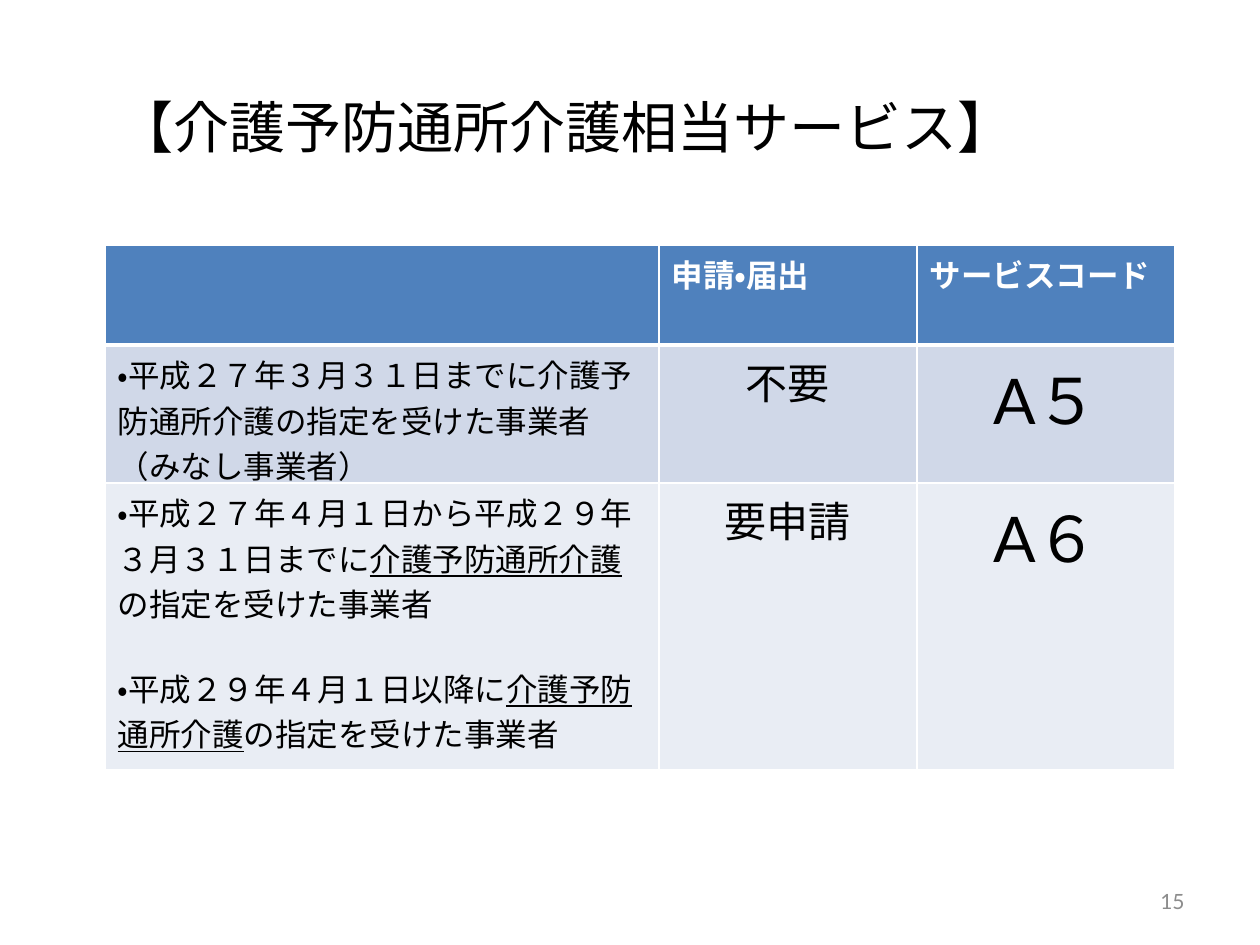
"""Build the slide on preventive day-care services and their service codes."""
from dataclasses import dataclass

from lxml import etree
from pptx import Presentation
from pptx import util as u
from pptx.dml.color import RGBColor
from pptx.enum import lang, text
from pptx.oxml.ns import qn

SCALE = u.Inches(1) / 126
COLORS = {
    "header": "4F81BD",
    "band": "D0D8E8",
    "light": "E9EDF4",
    "white": "FFFFFF",
    "black": "000000",
    "grey": "8C8C8C",
}
LEFT, CENTER, RIGHT = (text.PP_ALIGN.LEFT, text.PP_ALIGN.CENTER,
                       text.PP_ALIGN.RIGHT)
SERVICE = "介護予防通所介護"


@dataclass(frozen=True)
class Style:
    size: int
    color: str = "black"
    bold: bool = False
    align: text.PP_ALIGN = LEFT


@dataclass(frozen=True)
class Row:
    height: int
    fill: str
    styles: tuple[Style, ...]
    cells: tuple[str, ...]
    top: int = 1
    bottom: int = 1


HEAD = Style(18, "white", True)
BODY = (Style(18), Style(24, align=CENTER), Style(36, align=CENTER))
COLUMNS = (554, 258, 258)
ROWS = (
    Row(100, "header", (HEAD,) * 3, ("", "申請・届出", "サービスコード"), bottom=3),
    Row(138, "band", BODY,
        ("・平成２７年３月３１日までに介護予防通所介護の指定を受けた事業者（みなし事業者）",
         "不要", "A５"), top=3),
    Row(287, "light", BODY,
        (f"・平成２７年４月１日から平成２９年３月３１日までに_{SERVICE}_の指定を受けた事業者\n"
         f"・平成２９年４月１日以降に_{SERVICE}_の指定を受けた事業者",
         "要申請", "A６")),
)


def px(n: int) -> u.Emu:
    """Turn pixels into EMU."""
    return u.Emu(round(n * SCALE))


def write(tf, content: str, style: Style) -> None:
    """Write lines as paragraphs, underlining the parts between underscores."""
    for i, line in enumerate(content.split("\n")):
        p = tf.add_paragraph() if i else tf.paragraphs[0]
        p.alignment = style.align
        if i:
            p.space_before = u.Pt(22)
        for j, part in enumerate(line.split("_")):
            r = p.add_run()
            r.text = part
            formats = {
                "name": "Lato",
                "size": u.Pt(style.size),
                "bold": style.bold,
                "underline": j % 2 == 1,
                "language_id": lang.MSO_LANGUAGE_ID.JAPANESE,
            }
            for name, value in formats.items():
                setattr(r.font, name, value)
            r.font.color.rgb = RGBColor.from_string(COLORS[style.color])


def place(sp, left: int, top: int, width: int, height: int) -> None:
    """Set the position and size of a shape."""
    box = {"left": left, "top": top, "width": width, "height": height}
    for name, value in box.items():
        setattr(sp, name, px(value))


def draw_borders(cell, row: Row) -> None:
    """Give a cell white borders."""
    tc_pr = cell._tc.get_or_add_tcPr()
    widths = {"lnL": 1, "lnR": 1, "lnT": row.top, "lnB": row.bottom}
    for tag, width in widths.items():
        ln = etree.SubElement(tc_pr, qn(f"a:{tag}"), w=str(u.Pt(width)))
        fill = etree.SubElement(ln, qn("a:solidFill"))
        etree.SubElement(fill, qn("a:srgbClr"), val=COLORS["white"])


def draw_table(s) -> None:
    """Draw the table of applications and service codes."""
    frame = s.shapes.add_table(
        len(ROWS), len(COLUMNS), px(105), px(245),
        px(sum(COLUMNS)), px(sum(row.height for row in ROWS)))
    table = frame.table
    table.first_row = table.horz_banding = False
    for column, width in zip(table.columns, COLUMNS):
        column.width = px(width)
    for i, row in enumerate(ROWS):
        table.rows[i].height = px(row.height)
        for j, (content, style) in enumerate(zip(row.cells, row.styles)):
            cell = table.cell(i, j)
            draw_borders(cell, row)
            cell.fill.solid()
            cell.fill.fore_color.rgb = RGBColor.from_string(COLORS[row.fill])
            if content:
                write(cell.text_frame, content, style)


def main() -> None:
    """Build and save the slide."""
    prs = Presentation()
    prs.slide_width, prs.slide_height = px(1260), px(945)
    s = prs.slides.add_slide(prs.slide_layouts[5])

    number = s.shapes.add_textbox(0, 0, 0, 0)
    place(number, 903, 876, 294, 50)
    number.text_frame.word_wrap = True
    number.text_frame.vertical_anchor = text.MSO_ANCHOR.MIDDLE
    write(number.text_frame, "15", Style(12, "grey", align=RIGHT))

    title = s.shapes.title
    place(title, 105, 86, 1071, 149)
    title.text_frame.vertical_anchor = text.MSO_ANCHOR.TOP
    title.text_frame.auto_size = text.MSO_AUTO_SIZE.NONE
    write(title.text_frame, "【介護予防通所介護相当サービス】", Style(32))

    draw_table(s)
    prs.save("out.pptx")


if __name__ == "__main__":
    main()
